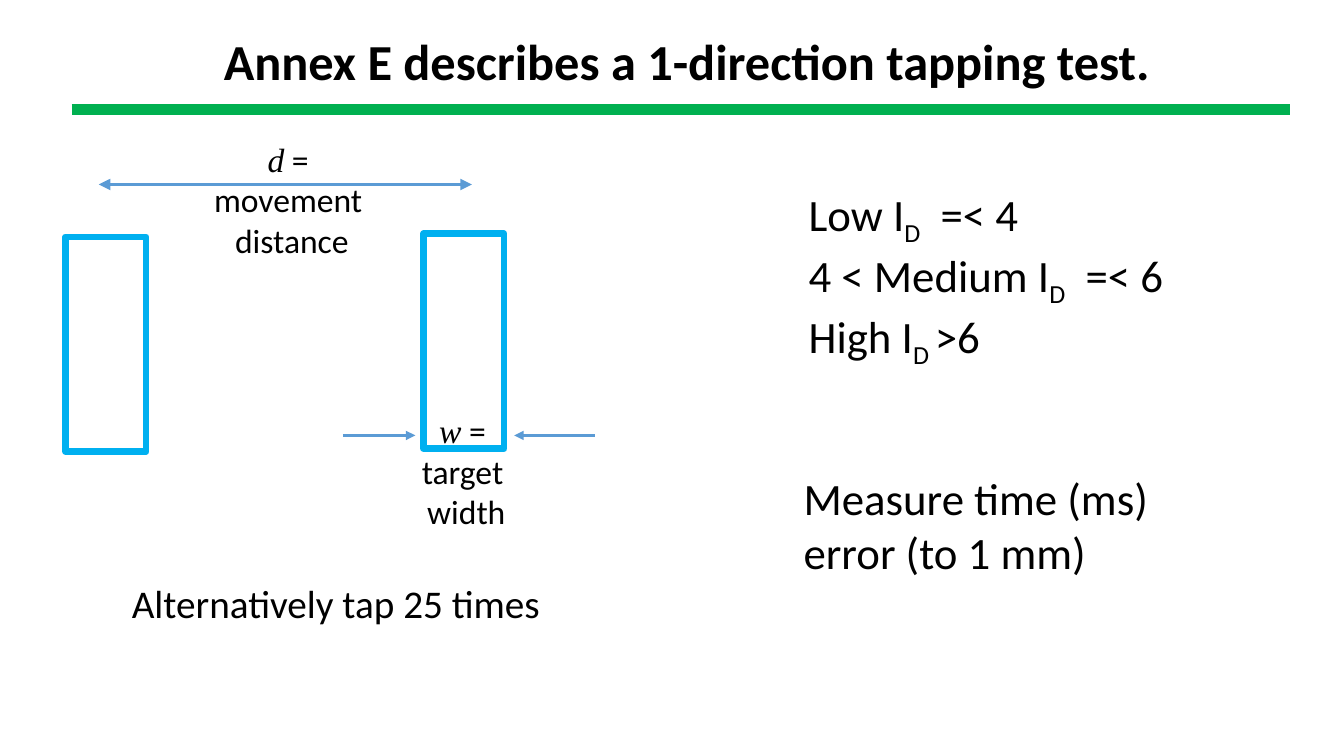
from dataclasses import dataclass

from lxml import etree
from pptx import Presentation
from pptx import util as u
from pptx.dml.color import RGBColor
from pptx.enum import shapes, text
from pptx.oxml.ns import qn


@dataclass(frozen=True)
class Theme:
    ink: str = "000000"
    rule: str = "00B050"
    target: str = "00B0F0"
    arrow: str = "5B9BD5"
    font: str = "Calibri"
    symbol_font: str = "Times New Roman"
    title_size: int = 36
    list_size: int = 32
    caption_size: int = 28
    label_size: int = 24


THEME = Theme()
LEFT, CENTER = text.PP_ALIGN.LEFT, text.PP_ALIGN.CENTER


def symbol(letter):
    return letter, "symbol"


def sub(letter):
    return letter, "sub"


def write_text(holder, lines, size, bold=False, align=LEFT):
    frame = holder.text_frame
    frame.word_wrap = True
    frame.auto_size = text.MSO_AUTO_SIZE.NONE
    frame.vertical_anchor = text.MSO_ANCHOR.TOP
    for index, line in enumerate(lines):
        paragraph = frame.add_paragraph() if index else frame.paragraphs[0]
        properties = paragraph._p.get_or_add_pPr()
        properties.set("marL", "0")
        properties.set("indent", "0")
        etree.SubElement(properties, qn("a:buNone"))
        paragraph.alignment = align
        paragraph.line_spacing = 1.0
        paragraph.space_before = paragraph.space_after = u.Pt(0)
        for part in line:
            words, style = part if isinstance(part, tuple) else (part, "plain")
            run = paragraph.add_run()
            run.text = words
            run.font.name = THEME.symbol_font if style == "symbol" else THEME.font
            run.font.size = u.Pt(size)
            run.font.bold = bold
            run.font.italic = style == "symbol"
            run.font.color.rgb = RGBColor.from_string(THEME.ink)
            if style == "sub":
                run._r.get_or_add_rPr().set("baseline", "-25000")


def place(holder, left, top, width, height):
    holder.left, holder.top = u.Inches(left), u.Inches(top)
    holder.width, holder.height = u.Inches(width), u.Inches(height)
    return holder


def add_label(slide, box, lines, size, align=LEFT):
    label = slide.shapes.add_textbox(*map(u.Inches, box))
    write_text(label, lines, size, align=align)


def add_line(slide, start, end, color, weight, arrowheads=()):
    line = slide.shapes.add_connector(
        shapes.MSO_CONNECTOR.STRAIGHT, *map(u.Inches, (*start, *end)))
    line.line.color.rgb = RGBColor.from_string(color)
    line.line.width = u.Pt(weight)
    for tag in arrowheads:
        etree.SubElement(line.line._get_or_add_ln(), qn(tag), type="triangle")
    etree.SubElement(line._element.spPr, qn("a:effectLst"))


def add_target(slide, left, top, width, height):
    target = slide.shapes.add_shape(
        shapes.MSO_SHAPE.RECTANGLE, *map(u.Inches, (left, top, width, height)))
    target.shadow.inherit = False
    target.fill.background()
    target.line.color.rgb = RGBColor.from_string(THEME.target)
    target.line.width = u.Pt(4.75)


def build_heading(slide, left, top, width):
    title = place(slide.shapes.title, left + 1.41, top, 9.5, 0.71)
    write_text(title, [["Annex E describes a 1-direction tapping test."]],
               THEME.title_size, bold=True)
    add_line(slide, (left, top + 0.84), (left + width, top + 0.84), THEME.rule, 8)


def build_tapping_diagram(slide, left, top):
    target_width, target_height = 0.8, 2.13
    second_left = left + 3.55
    add_label(slide, (second_left - 0.12, top + 2.69, 1.09, 1.31),
              [[symbol("w"), " = "], ["target "], ["width"]],
              THEME.label_size, CENTER)
    add_label(slide, (left + 0.56, top + 4.37, 4.3, 0.57),
              [["Alternatively tap 25 times"]], THEME.caption_size)
    for target_left, target_top in ((left, top + 1.02), (second_left, top + 0.99)):
        add_target(slide, target_left, target_top, target_width, target_height)

    distance_y = top + 0.5
    add_line(slide, (left + 0.33, distance_y), (left + 4.03, distance_y),
             THEME.arrow, 2.75, ("a:headEnd", "a:tailEnd"))
    add_label(slide, (left + 1.27, top, 1.95, 1.31),
              [[symbol("d"), " = "], ["movement "], ["distance"]],
              THEME.label_size, CENTER)

    width_y = top + 2.99
    second_right = second_left + target_width
    for start, end in ((second_left - 0.8, second_left - 0.08),
                       (second_right + 0.9, second_right + 0.1)):
        add_line(slide, (start, width_y), (end, width_y),
                 THEME.arrow, 2.25, ("a:tailEnd",))


def build_measures(slide, left, top):
    difficulty, measures = list(slide.placeholders)[1:3]
    place(difficulty, left + 0.05, top, 3.78, 1.72)
    write_text(difficulty, [
        ["Low I", sub("D"), "  =< 4"],
        ["4 < Medium I", sub("D"), "  =< 6"],
        ["High I", sub("D "), ">6"],
    ], THEME.list_size)
    place(measures, left, top + 2.82, 3.66, 1.18)
    write_text(measures, [["Measure time (ms)"], ["error (to 1 mm)"]],
               THEME.list_size)


def main():
    deck = Presentation()
    deck.slide_width, deck.slide_height = u.Inches(13.33), u.Inches(7.5)
    slide = deck.slides.add_slide(deck.slide_layouts.get_by_name("Two Content"))
    build_heading(slide, 0.71, 0.25, 12.08)
    build_tapping_diagram(slide, 0.65, 1.33)
    build_measures(slide, 7.87, 1.8)
    deck.save("out.pptx")


if __name__ == "__main__":
    main()
